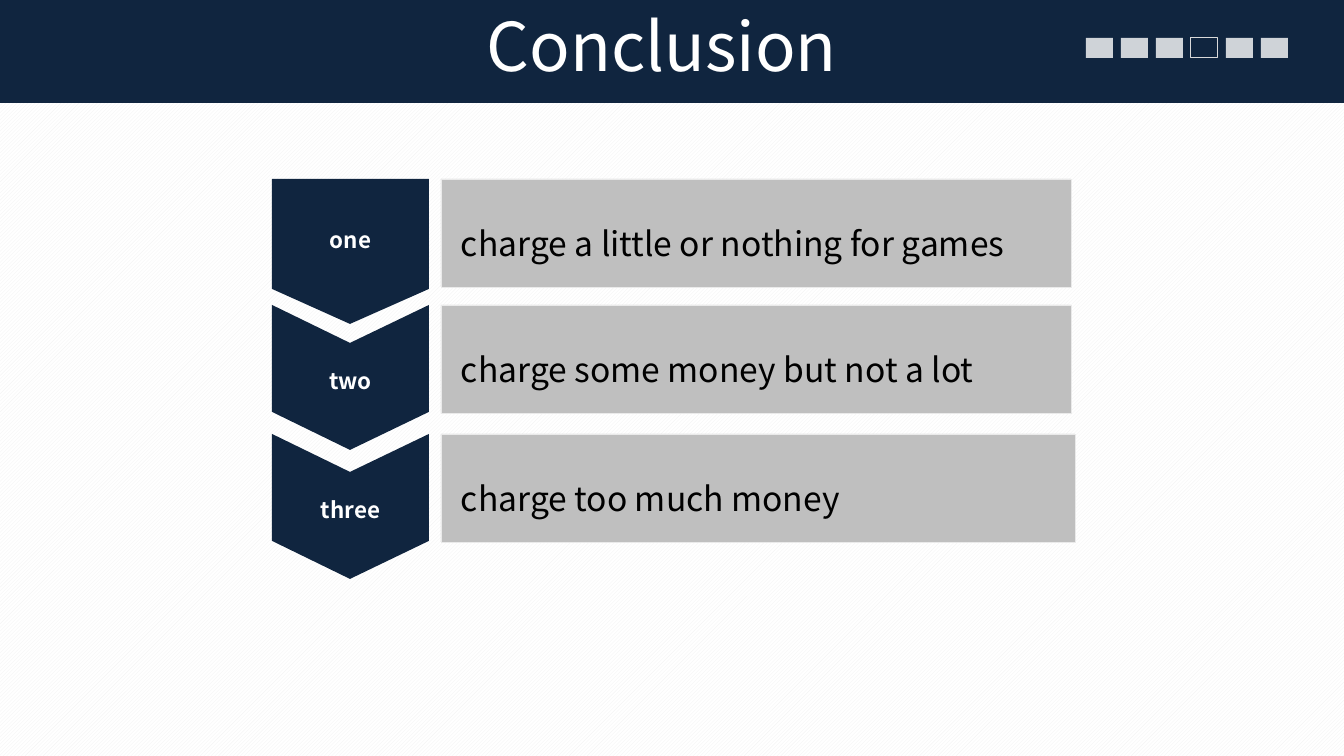
from dataclasses import dataclass

import pptx
import pptx.dml.color
import pptx.enum.dml
import pptx.enum.shapes
import pptx.enum.text
import pptx.oxml
import pptx.oxml.ns
import pptx.util
from pptx.shapes.autoshape import Shape
from pptx.slide import Slide

EMU_PER_PX = 9144000 / 1344
FONT = "Noto Sans CJK SC"
NAVY, GREY, WHITE, BLACK = "10253F", "BFBFBF", "FFFFFF", "000000"
ALIGN = pptx.enum.text.PP_ALIGN
ANCHOR = pptx.enum.text.MSO_ANCHOR


@dataclass
class Step:
    label: str
    message: str
    top: int
    bar_width: int = 630
    notch: int = 38
    side: int = 107
    bottom_inset: int = 7


STEPS = [
    Step("one", "charge a little or nothing for games", 179,
         notch=0, side=110, bottom_inset=36),
    Step("two", "charge some money but not a lot", 305),
    Step("three", "charge too much money", 434, bar_width=634),
]
CHEVRON_LEFT, CHEVRON_WIDTH, CHEVRON_HEIGHT = 272, 157, 145
BAR_LEFT, BAR_HEIGHT = 441, 108
MARKER_COUNT, CURRENT_MARKER = 6, 3


def px(length: int) -> int:
    return round(length * EMU_PER_PX)


def color(value: str) -> pptx.dml.color.RGBColor:
    return pptx.dml.color.RGBColor.from_string(value)


def style_shape(shape: Shape, fill: str = "", line: str = "", line_width: float = 0.25) -> None:
    shape.shadow.inherit = False
    if fill:
        shape.fill.solid()
        shape.fill.fore_color.rgb = color(fill)
    else:
        shape.fill.background()
    if line:
        shape.line.color.rgb = color(line)
        shape.line.width = pptx.util.Pt(line_width)
    else:
        shape.line.fill.background()


def add_rectangle(slide: Slide, left: int, top: int, width: int, height: int,
                  fill: str = "", line: str = "", line_width: float = 0.25) -> Shape:
    shape = slide.shapes.add_shape(pptx.enum.shapes.MSO_SHAPE.RECTANGLE,
                                   px(left), px(top), px(width), px(height))
    style_shape(shape, fill, line, line_width)
    return shape


def set_opacity(shape: Shape, percent: int) -> None:
    fill_color = shape.fill._xPr.find(".//" + pptx.oxml.ns.qn("a:srgbClr"))
    alpha = pptx.oxml.parse_xml(
        f'<a:alpha {pptx.oxml.ns.nsdecls("a")} val="{percent * 1000}"/>')
    fill_color.append(alpha)


def write_text(shape: Shape, text: str, size: int, text_color: str, align: ALIGN,
               spacing: float, anchor: ANCHOR = ANCHOR.MIDDLE, bold: bool = False,
               left_inset: int = 13, bottom_inset: int = 7) -> None:
    frame = shape.text_frame
    frame.text = text
    frame.word_wrap = True
    frame.vertical_anchor = anchor
    frame.margin_left, frame.margin_right = px(left_inset), px(13)
    frame.margin_top, frame.margin_bottom = px(7), px(bottom_inset)
    paragraph = frame.paragraphs[0]
    paragraph.alignment = align
    paragraph.line_spacing = spacing
    font = paragraph.runs[0].font
    font.name = FONT
    font.size = pptx.util.Pt(size)
    font.bold = bold
    font.color.rgb = color(text_color)


def add_header(slide: Slide) -> None:
    add_rectangle(slide, 0, 0, 1344, 103, NAVY)
    # Progress markers, the current one in outline
    for index in range(MARKER_COUNT):
        place = (1086 + 35 * index, 38, 27, 20)
        if index == CURRENT_MARKER:
            add_rectangle(slide, *place, line="D9D9D9", line_width=0.5)
        else:
            set_opacity(add_rectangle(slide, *place, fill=WHITE), 80)
    title = slide.shapes.add_textbox(px(386), px(7), px(464), px(78))
    write_text(title, "Conclusion", 36, WHITE, ALIGN.RIGHT, 0.9, ANCHOR.TOP)


def add_step(slide: Slide, step: Step) -> None:
    # Message bar
    bar = add_rectangle(slide, BAR_LEFT, step.top, step.bar_width, BAR_HEIGHT, GREY, "EAEAEA")
    write_text(bar, step.message, 18, BLACK, ALIGN.LEFT, 1.5, left_inset=20)

    # Downward chevron, flat on top when the notch is zero
    right = CHEVRON_LEFT + CHEVRON_WIDTH
    middle = CHEVRON_LEFT + CHEVRON_WIDTH / 2
    builder = slide.shapes.build_freeform(CHEVRON_LEFT, step.top, scale=EMU_PER_PX)
    builder.add_line_segments([
        (middle, step.top + step.notch),
        (right, step.top),
        (right, step.top + step.side),
        (middle, step.top + CHEVRON_HEIGHT),
        (CHEVRON_LEFT, step.top + step.side),
    ], close=True)
    chevron = builder.convert_to_shape()
    style_shape(chevron, NAVY)
    write_text(chevron, step.label, 12, WHITE, ALIGN.CENTER, 1.2, bold=True,
               bottom_inset=step.bottom_inset)


def main() -> None:
    presentation = pptx.Presentation()
    presentation.slide_width, presentation.slide_height = px(1344), px(756)
    slide = presentation.slides.add_slide(presentation.slide_layouts[6])

    # Hatched background
    background = slide.background.fill
    background.patterned()
    background.pattern = pptx.enum.dml.MSO_PATTERN.LIGHT_UPWARD_DIAGONAL
    background.fore_color.rgb = color("F2F2F2")
    background.back_color.rgb = color(WHITE)

    add_header(slide)
    for step in STEPS:
        add_step(slide, step)
    presentation.save("out.pptx")


if __name__ == "__main__":
    main()
